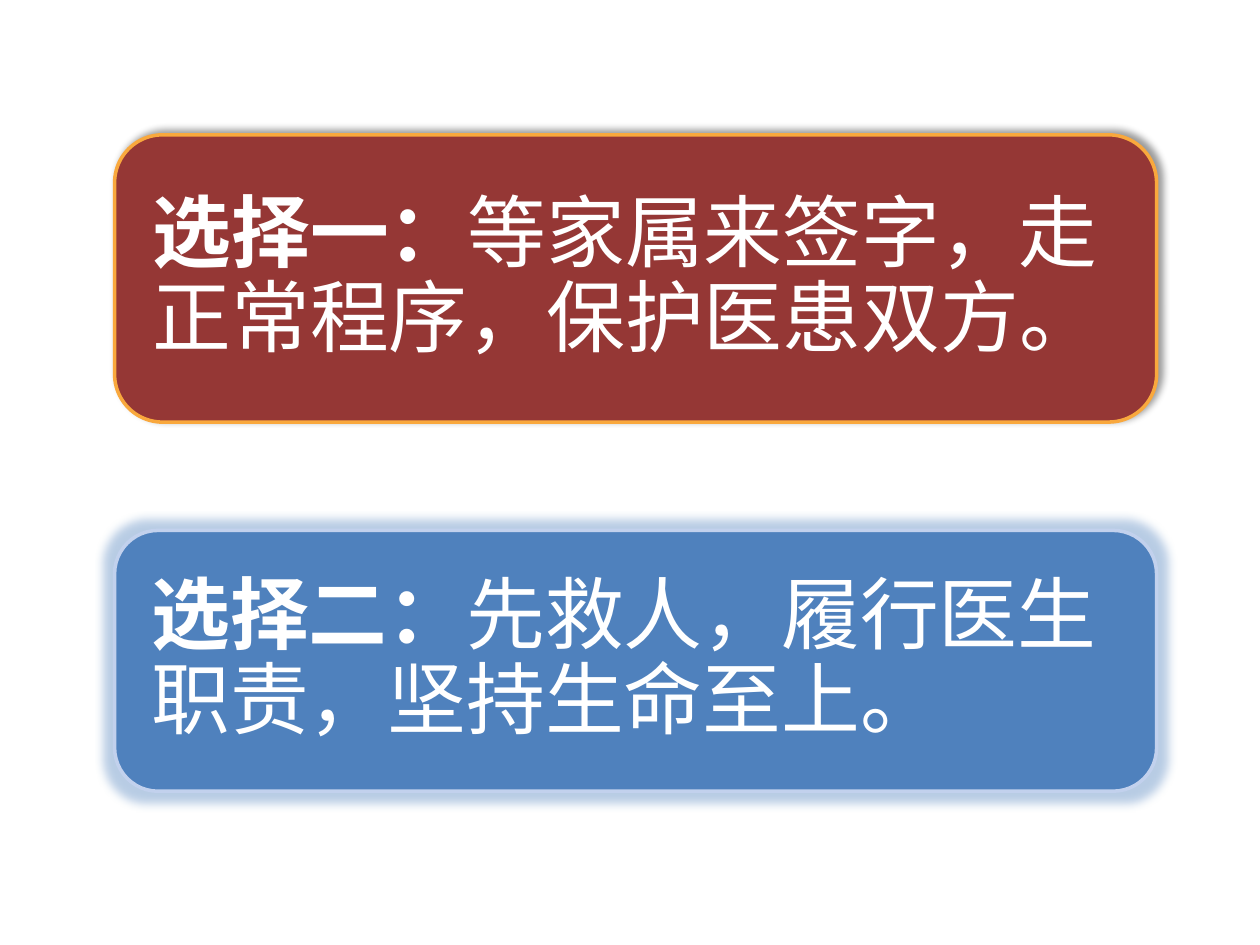
from lxml.etree import SubElement
from pptx import Presentation
from pptx.dml.color import RGBColor
from pptx.enum.shapes import MSO_SHAPE
from pptx.enum.text import MSO_ANCHOR, PP_ALIGN
from pptx.oxml.ns import qn
from pptx.util import Inches, Pt


def rgb(code):
    return RGBColor.from_string(code)


def effect(shape, name, color, alpha, **attrs):
    """Add a shadow or glow with the given colour and opacity in percent."""
    shape.shadow.inherit = False
    effects = shape._element.spPr.find(qn("a:effectLst"))
    node = SubElement(effects, qn(f"a:{name}"),
                      {key: str(value) for key, value in attrs.items()})
    tint = SubElement(node, qn("a:srgbClr"), val=color)
    SubElement(tint, qn("a:alpha"), val=str(alpha * 1000))


def panel(slide, box, fill, line, label, words):
    """Place a rounded panel with a bold label followed by plain words."""
    shape = slide.shapes.add_shape(
        MSO_SHAPE.ROUNDED_RECTANGLE, *(Inches(n) for n in box))
    shape.fill.solid()
    shape.fill.fore_color.rgb = rgb(fill)
    shape.line.color.rgb = rgb(line)
    shape.line.width = Pt(2)

    frame = shape.text_frame
    frame.word_wrap = True
    frame.vertical_anchor = MSO_ANCHOR.MIDDLE
    # The text area starts inside the curve of the corners.
    frame.margin_left = frame.margin_right = Inches(0.19)
    frame.margin_top = frame.margin_bottom = Inches(0.19)
    para = frame.paragraphs[0]
    para.alignment = PP_ALIGN.LEFT
    para.line_spacing = 0.9
    para.font.size = Pt(45)
    para.font.name = "Calibri"
    para.font.color.rgb = rgb("FFFFFF")
    for text, bold in ((label, True), (words, False)):
        run = para.add_run()
        run.text = text
        run.font.bold = bold
    return shape


def main():
    deck = Presentation()
    deck.slide_width, deck.slide_height = Inches(10), Inches(7.5)
    slide = deck.slides.add_slide(deck.slide_layouts[6])

    first = panel(slide, (0.91, 1.07, 8.27, 2.28), "953735", "F9A83D",
                  "选择一：", "等家属来签字，走正常程序，保护医患双方。")
    effect(first, "outerShdw", "000000", 40,
           blurRad=Pt(4), dist=Pt(3), dir=315 * 60000)

    second = panel(slide, (0.91, 4.21, 8.27, 2.07), "4F81BD", "C2D1ED",
                   "选择二：", "先救人，履行医生职责，坚持生命至上。")
    effect(second, "glow", "4F81BD", 40, rad=Pt(11))

    deck.save("out.pptx")


if __name__ == "__main__":
    main()
